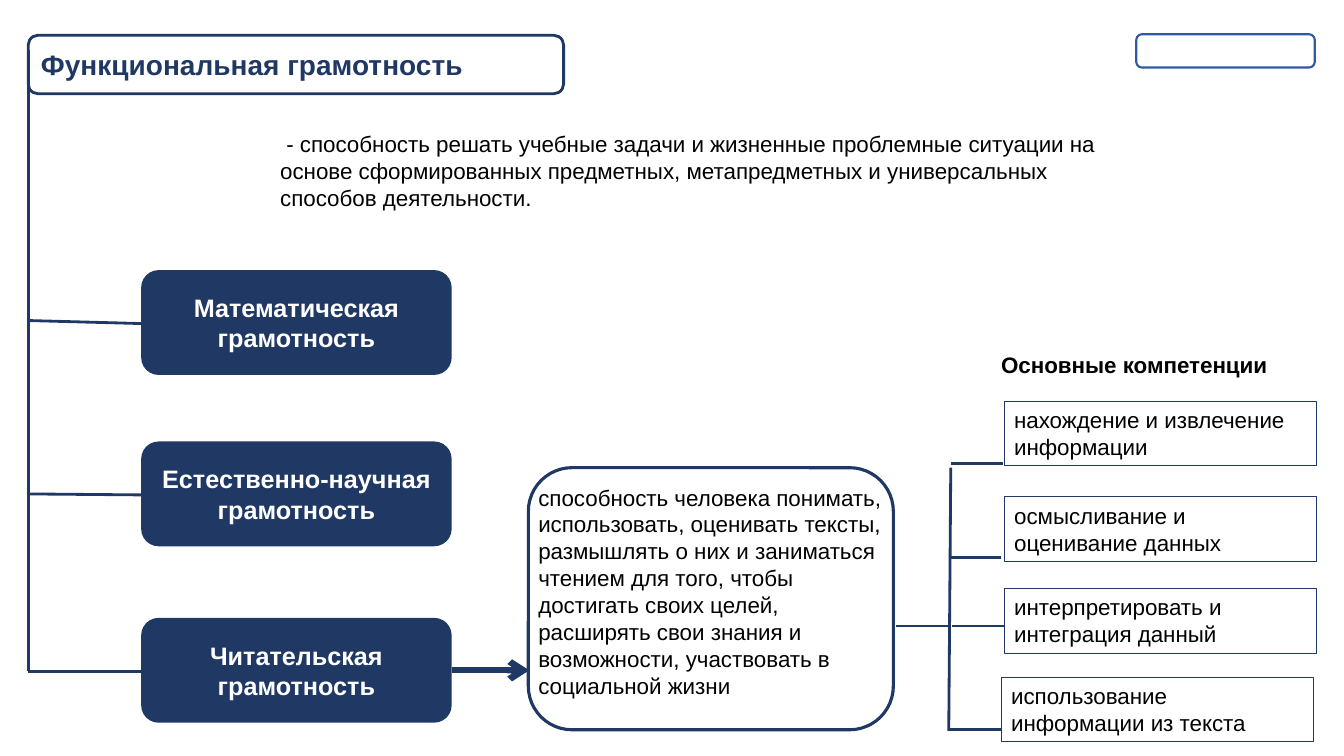
from lxml.etree import SubElement
from pptx import Presentation
from pptx.dml.color import RGBColor
from pptx.enum.shapes import MSO_CONNECTOR, MSO_SHAPE
from pptx.enum.text import MSO_ANCHOR, PP_ALIGN
from pptx.oxml.ns import qn
from pptx.util import Inches, Pt

COLORS = {"navy": "203864", "blue": "3059A2", "white": "FFFFFF", "black": "000000"}
ROUNDED = MSO_SHAPE.ROUNDED_RECTANGLE

LITERACIES = [
    ("Математическая грамотность", 2.68, 3.18),
    ("Естественно-научная грамотность", 4.38, 4.9),
    ("Читательская грамотность", 6.13, 6.66),
]
COMPETENCIES = [
    ("нахождение и извлечение информации", 9.96, 3.98),
    ("осмысливание и оценивание данных", 9.96, 4.93),
    ("интерпретировать и интеграция данный", 9.96, 5.84),
    ("использование информации из текста", 9.93, 6.72),
]
COMPETENCY_BRANCHES = [(9.43, 9.95, 4.6), (9.41, 9.93, 5.53), (9.44, 9.96, 6.21), (9.41, 9.93, 7.24)]
DEFINITION = (
    " - способность решать учебные задачи и жизненные проблемные ситуации на основе "
    "сформированных предметных, метапредметных и универсальных способов деятельности."
)
READING = (
    "способность человека понимать, использовать, оценивать тексты, размышлять о них "
    "и заниматься чтением для того, чтобы достигать своих целей, расширять свои знания "
    "и возможности, участвовать в социальной жизни"
)


def color(name):
    return RGBColor.from_string(COLORS[name])


def write_text(shape, text, size=16, ink="black", bold=False,
               align=PP_ALIGN.LEFT, anchor=MSO_ANCHOR.TOP, wrap=True):
    frame = shape.text_frame
    frame.word_wrap = wrap
    frame.vertical_anchor = anchor
    paragraph = frame.paragraphs[0]
    paragraph.alignment = align
    run = paragraph.add_run()
    run.text = text
    for name, value in {"name": "Arial", "size": Pt(size), "bold": bold}.items():
        setattr(run.font, name, value)
    run.font.color.rgb = color(ink)


def add_box(slide, kind, place, fill="white", line="navy", width=None):
    shape = slide.shapes.add_shape(kind, *map(Inches, place))
    shape.shadow.inherit = False
    shape.fill.solid()
    shape.fill.fore_color.rgb = color(fill)
    if width:
        shape.line.color.rgb = color(line)
        shape.line.width = Pt(width)
    else:
        shape.line.fill.background()
    return shape


def add_label(slide, place, text, **style):
    label = slide.shapes.add_textbox(*map(Inches, place))
    write_text(label, text, **style)


def add_line(slide, start, end, width=2, arrow=False):
    line = slide.shapes.add_connector(MSO_CONNECTOR.STRAIGHT, *map(Inches, (*start, *end)))
    line.line.color.rgb = color("navy")
    line.line.width = Pt(width)
    if arrow:
        SubElement(line.line._get_or_add_ln(), qn("a:tailEnd"), type="arrow")
    SubElement(line._element.spPr, qn("a:effectLst"))


def add_heading(slide):
    add_box(slide, ROUNDED, (11.27, 0.34, 1.77, 0.33), line="blue", width=1.5)
    title = add_box(slide, ROUNDED, (0.28, 0.35, 5.31, 0.58), width=2)
    write_text(title, "Функциональная грамотность", size=20, ink="navy", bold=True,
               anchor=MSO_ANCHOR.MIDDLE)
    add_label(slide, (2.68, 1.24, 8.48, 0.91), DEFINITION)


def add_literacies(slide):
    add_line(slide, (0.28, 0.5), (0.28, 6.66))
    for text, top, branch in LITERACIES:
        box = add_box(slide, ROUNDED, (1.4, top, 3.08, 1.04), fill="navy")
        write_text(box, text, size=18, ink="white", bold=True,
                   align=PP_ALIGN.CENTER, anchor=MSO_ANCHOR.MIDDLE)
        add_line(slide, (1.4, top + 0.53), (0.28, branch))


def add_reading(slide):
    add_line(slide, (4.48, 6.65), (5.25, 6.65), width=4.5, arrow=True)
    add_box(slide, ROUNDED, (5.24, 4.64, 3.62, 2.6), width=2.25)
    add_label(slide, (5.24, 4.75, 3.62, 2.26), READING)


def add_competencies(slide):
    add_label(slide, (9.83, 3.43, 2.88, 0.37), "Основные компетенции", bold=True, wrap=False)
    add_line(slide, (8.89, 6.21), (9.41, 6.21))
    add_line(slide, (9.43, 4.64), (9.41, 7.25))
    for left, right, height in COMPETENCY_BRANCHES:
        add_line(slide, (right, height), (left, height))
    for text, left, top in COMPETENCIES:
        box = add_box(slide, MSO_SHAPE.RECTANGLE, (left, top, 3.1, 0.64), width=0.75)
        write_text(box, text)


def main():
    presentation = Presentation()
    presentation.slide_width = Inches(13.33)
    presentation.slide_height = Inches(7.5)
    slide = presentation.slides.add_slide(presentation.slide_layouts[6])
    add_heading(slide)
    add_literacies(slide)
    add_reading(slide)
    add_competencies(slide)
    presentation.save("out.pptx")


if __name__ == "__main__":
    main()
